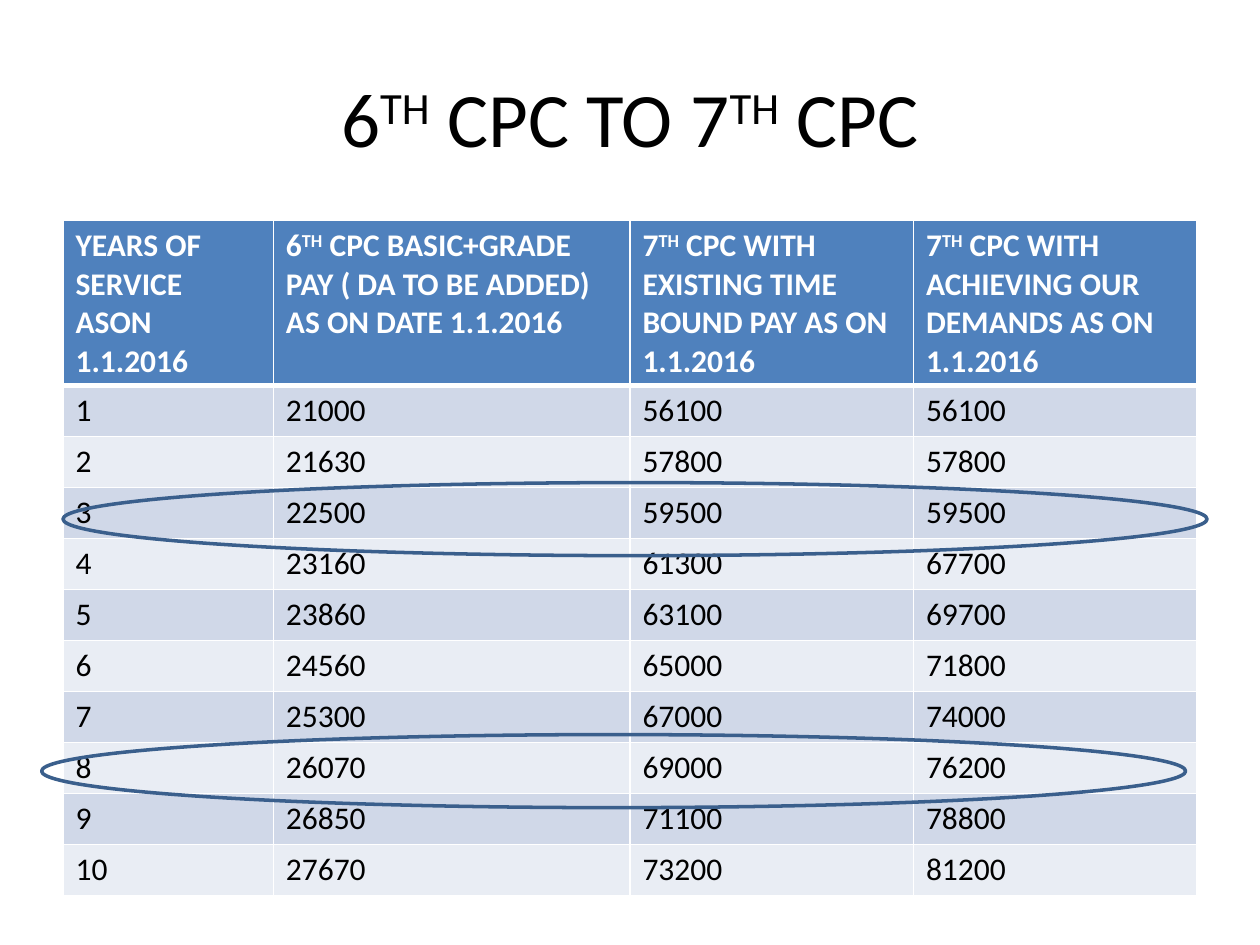
from lxml import etree
from pptx import Presentation
from pptx.dml.color import RGBColor
from pptx.enum.shapes import MSO_SHAPE
from pptx.enum.text import MSO_ANCHOR, PP_ALIGN
from pptx.oxml.ns import qn
from pptx.util import Inches, Pt

ELLIPSE = MSO_SHAPE.OVAL
MIDDLE = MSO_ANCHOR.MIDDLE
CENTER = PP_ALIGN.CENTER

FONT = "Calibri"
COLORS = {
    "text": "000000",
    "white": "FFFFFF",
    "header": "4F81BD",
    "odd_year": "D0D8E8",
    "even_year": "E9EDF4",
    "highlight": "3A5F8C",
}
TITLE = ["6", "TH", " CPC TO 7", "TH", " CPC"]
HEADINGS = [
    [["YEARS OF SERVICE"], ["ASON 1.1.2016"]],
    [["6", "TH", " CPC BASIC+GRADE PAY ( DA TO BE ADDED) AS ON DATE 1.1.2016"]],
    [["7", "TH", " CPC WITH EXISTING TIME BOUND PAY AS ON 1.1.2016"]],
    [["7", "TH", " CPC WITH ACHIEVING OUR DEMANDS AS ON 1.1.2016"]],
]
PAY_BY_YEAR = [
    (21000, 56100, 56100),
    (21630, 57800, 57800),
    (22500, 59500, 59500),
    (23160, 61300, 67700),
    (23860, 63100, 69700),
    (24560, 65000, 71800),
    (25300, 67000, 74000),
    (26070, 69000, 76200),
    (26850, 71100, 78800),
    (27670, 73200, 81200),
]
COLUMN_WIDTHS = [1.67, 2.83, 2.25, 2.25]
HEADER_HEIGHT = 1.31
BODY_HEIGHT = 4.05
HIGHLIGHTS = [(0.5, 3.83), (0.33, 5.83)]


def rgb(name):
    """Return the named colour."""
    return RGBColor.from_string(COLORS[name])


def add_runs(paragraph, pieces, size, color, bold=False):
    """Add the pieces as runs, raising every ordinal suffix."""
    for piece in pieces:
        run = paragraph.add_run()
        run.text = piece
        run.font.name = FONT
        run.font.size = Pt(size)
        run.font.bold = bold
        run.font.color.rgb = rgb(color)
        if piece == "TH":
            run.font._element.set("baseline", "30000")


def add_title(slide):
    """Add the centred slide title."""
    title = slide.shapes.add_textbox(Inches(0.5), Inches(0.3), Inches(9), Inches(1.25))
    frame = title.text_frame
    frame.word_wrap = True
    frame.vertical_anchor = MIDDLE
    frame.paragraphs[0].alignment = CENTER
    add_runs(frame.paragraphs[0], TITLE, 44, "text")


def set_borders(cell, top, bottom):
    """Draw white cell borders with the given top and bottom widths."""
    properties = cell._tc.get_or_add_tcPr()
    for side, width in (("lnL", 1), ("lnR", 1), ("lnT", top), ("lnB", bottom)):
        line = etree.SubElement(properties, qn(f"a:{side}"), w=str(Pt(width)))
        fill = etree.SubElement(line, qn("a:solidFill"))
        etree.SubElement(fill, qn("a:srgbClr"), val=COLORS["white"])


def fill_cell(cell, paragraphs, fill, color, bold=False, top=1, bottom=1):
    """Write, border and fill one table cell."""
    frame = cell.text_frame
    for index, pieces in enumerate(paragraphs):
        paragraph = frame.add_paragraph() if index else frame.paragraphs[0]
        add_runs(paragraph, pieces, 18, color, bold)
    set_borders(cell, top, bottom)
    cell.fill.solid()
    cell.fill.fore_color.rgb = rgb(fill)


def add_pay_table(slide):
    """Add the table of pay by years of service."""
    years = len(PAY_BY_YEAR)
    table = slide.shapes.add_table(
        years + 1, len(HEADINGS), Inches(0.5), Inches(1.75),
        Inches(sum(COLUMN_WIDTHS)), Inches(HEADER_HEIGHT + BODY_HEIGHT),
    ).table
    for column, width in zip(table.columns, COLUMN_WIDTHS):
        column.width = Inches(width)
    for row in table.rows:
        row.height = Inches(BODY_HEIGHT / years)
    table.rows[0].height = Inches(HEADER_HEIGHT)
    for column, heading in enumerate(HEADINGS):
        fill_cell(table.cell(0, column), heading, "header", "white", bold=True, bottom=3)
    for year, pay in enumerate(PAY_BY_YEAR, start=1):
        band = "odd_year" if year % 2 else "even_year"
        for column, value in enumerate((year, *pay)):
            fill_cell(table.cell(year, column), [[str(value)]], band, "text",
                      top=3 if year == 1 else 1)


def add_highlight(slide, left, top):
    """Circle one row of the table."""
    ring = slide.shapes.add_shape(ELLIPSE, Inches(left), Inches(top), Inches(9.08), Inches(0.58))
    ring.shadow.inherit = False
    ring.fill.background()
    ring.line.color.rgb = rgb("highlight")
    ring.line.width = Pt(2)


def main():
    """Build and save the slide."""
    presentation = Presentation()
    presentation.slide_width = Inches(10)
    presentation.slide_height = Inches(7.5)
    slide = presentation.slides.add_slide(presentation.slide_layouts[6])
    add_title(slide)
    add_pay_table(slide)
    for left, top in HIGHLIGHTS:
        add_highlight(slide, left, top)
    presentation.save("out.pptx")


if __name__ == "__main__":
    main()
